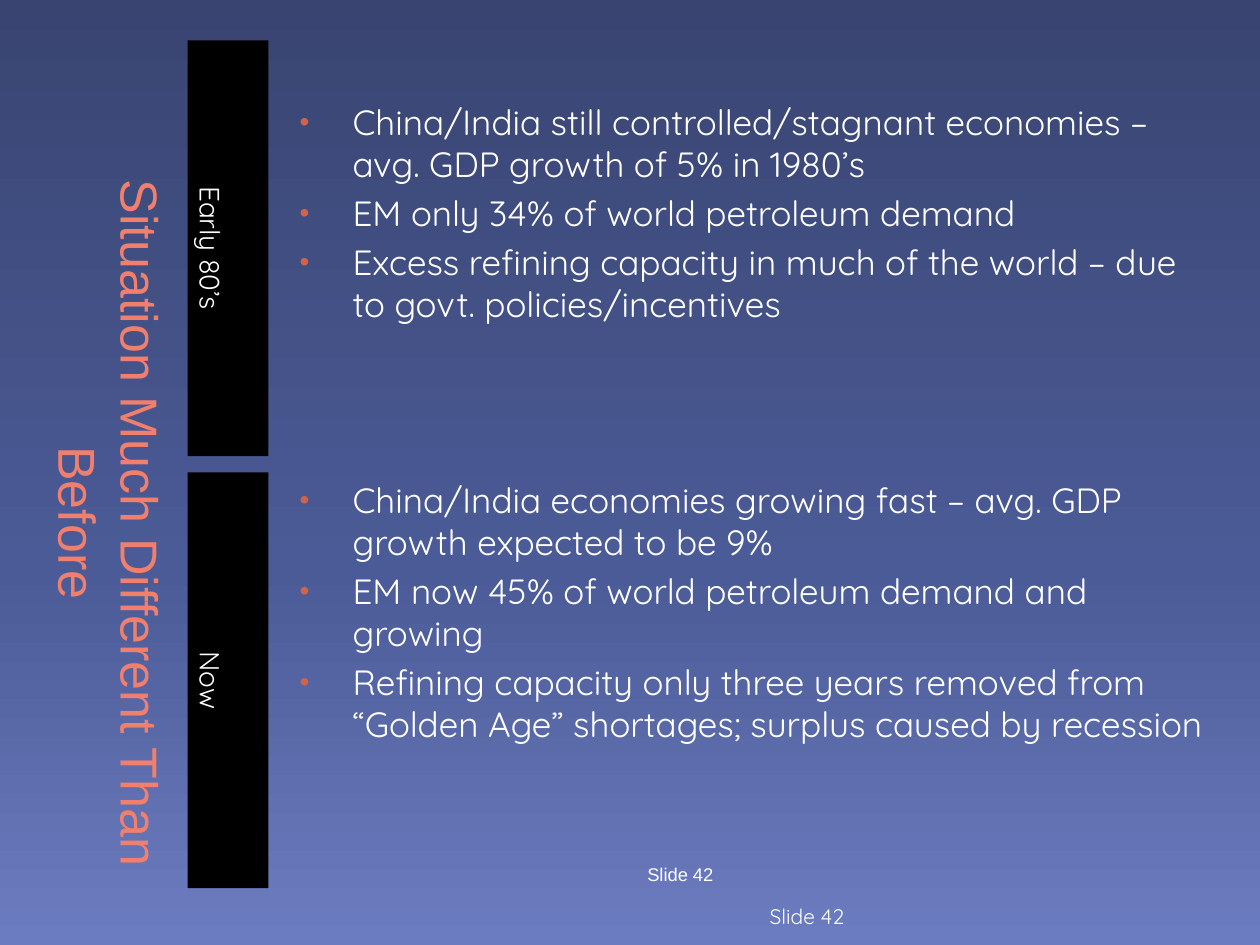
from copy import deepcopy

from pptx import Presentation
from pptx import util as u
from pptx.dml.color import RGBColor
from pptx.enum import shapes, text
from pptx.oxml.xmlchemy import OxmlElement
from pptx.oxml.ns import qn

SECTIONS = [
    ("Early 80’s", 0.32, 0.75, 2.87, [
        "China/India still controlled/stagnant economies – avg. GDP growth of 5% in 1980’s",
        "EM only 34% of world petroleum demand",
        "Excess refining capacity in much of the world – due to govt. policies/incentives",
    ]),
    ("Now", 3.75, 3.75, 3.3, [
        "China/India economies growing fast – avg. GDP growth expected to be 9%",
        "EM now 45% of world petroleum demand and growing",
        "Refining capacity only three years removed from “Golden Age” shortages; "
        "surplus caused by recession",
    ]),
]


def color(value):
    return RGBColor.from_string(value)


def element(parent, tag, **attributes):
    """Append a new XML child with the given attributes and return it."""
    child = OxmlElement(tag)
    for name, value in attributes.items():
        child.set(name, str(value))
    parent.append(child)
    return child


class SlideBuilder:
    heading_font = "Arial"
    body_font = "Quicksand"
    white = "FFFFFF"
    accent = "D16349"

    def __init__(self, slide):
        self.slide = slide

    def background(self, stops):
        fill = self.slide.background.fill
        fill.gradient()
        fill.gradient_angle = 270
        stop_list = next(self.slide.element.iter(qn("a:gsLst")))
        while len(stop_list) < len(stops):
            stop_list.append(deepcopy(stop_list[-1]))
        for stop, (position, value) in zip(fill.gradient_stops, stops):
            stop.position = position
            stop.color.rgb = color(value)

    def frame(self, shape, anchor):
        frame = shape.text_frame
        frame.word_wrap = True
        frame.auto_size = text.MSO_AUTO_SIZE.NONE
        frame.vertical_anchor = anchor
        return frame

    def run(self, paragraph, wording, size, font, value=white):
        run = paragraph.add_run()
        run.text = wording
        run.font.size = u.Pt(size)
        run.font.name = font
        run.font.color.rgb = color(value)
        return run

    def title(self, wording, left, top, width, height):
        """Fill the given upright area with a title turned to read downwards."""
        shape = self.slide.shapes.title
        shape.left = u.Inches(left + (width - height) / 2)
        shape.top = u.Inches(top + (height - width) / 2)
        shape.width, shape.height = u.Inches(height), u.Inches(width)
        shape.rotation = 90
        frame = self.frame(shape, text.MSO_ANCHOR.BOTTOM)
        frame.margin_top = frame.margin_right = frame.margin_bottom = u.Inches(0.05)
        frame.margin_left = u.Inches(1.12)
        paragraph = frame.paragraphs[0]
        paragraph.alignment = text.PP_ALIGN.CENTER
        run = self.run(paragraph, wording, 29.7, self.heading_font, "F07F6D")
        outline = OxmlElement("a:ln")
        outline.set("w", str(u.Pt(0.5)))
        element(element(outline, "a:solidFill"), "a:srgbClr", val=self.white)
        run.font._element.insert(0, outline)

    def label(self, wording, left, top, width, height):
        shape = self.slide.shapes.add_shape(
            shapes.MSO_SHAPE.RECTANGLE,
            u.Inches(left), u.Inches(top), u.Inches(width), u.Inches(height))
        shape.shadow.inherit = False
        shape.fill.solid()
        shape.fill.fore_color.rgb = color("000000")
        shape.line.fill.background()
        frame = self.frame(shape, text.MSO_ANCHOR.BOTTOM)
        frame._txBody.bodyPr.set("vert", "vert")
        frame.margin_left = frame.margin_bottom = u.Inches(0.05)
        paragraph = frame.paragraphs[0]
        paragraph.alignment = text.PP_ALIGN.CENTER
        self.run(paragraph, wording, 16, self.body_font)

    def text_box(self, left, top, width, height, anchor=text.MSO_ANCHOR.TOP):
        shape = self.slide.shapes.add_textbox(
            u.Inches(left), u.Inches(top), u.Inches(width), u.Inches(height))
        return self.frame(shape, anchor)

    def bullets(self, items, left, top, width, height):
        frame = self.text_box(left, top, width, height)
        for index, item in enumerate(items):
            paragraph = frame.add_paragraph() if index else frame.paragraphs[0]
            properties = paragraph._p.get_or_add_pPr()
            properties.set("marL", str(u.Inches(0.49)))
            properties.set("indent", str(u.Inches(-0.42)))
            element(element(properties, "a:buClr"), "a:srgbClr", val=self.accent)
            element(properties, "a:buSzPct", val=80000)
            element(properties, "a:buFont", typeface=self.heading_font)
            element(properties, "a:buChar", char="•")
            if index:
                paragraph.space_before = u.Pt(4)
            self.run(paragraph, item, 20, self.body_font)

    def slide_number(self, left, top, width, height, size, font, anchor):
        paragraph = self.text_box(left, top, width, height, anchor).paragraphs[0]
        paragraph.alignment = text.PP_ALIGN.CENTER
        self.run(paragraph, "Slide 42", size, font)


def main():
    presentation = Presentation()
    presentation.slide_width, presentation.slide_height = u.Inches(10), u.Inches(7.5)
    slide = presentation.slides.add_slide(presentation.slide_layouts[5])
    builder = SlideBuilder(slide)
    builder.background([(0, "394471"), (0.6, "4B5B97"), (1, "6C7CC0")])
    builder.slide_number(4, 6.8, 2.8, 0.28, 10.5, builder.heading_font, text.MSO_ANCHOR.TOP)
    builder.title("Situation Much Different Than Before", 0.33, 0.25, 1.17, 6.73)
    for name, label_top, text_top, text_height, items in SECTIONS:
        builder.label(name, 1.49, label_top, 0.64, 3.3)
        builder.bullets(items, 2.21, text_top, 7.5, text_height)
    builder.slide_number(5.24, 7.09, 2.33, 0.33, 12, builder.body_font, text.MSO_ANCHOR.BOTTOM)
    presentation.save("out.pptx")


if __name__ == "__main__":
    main()
